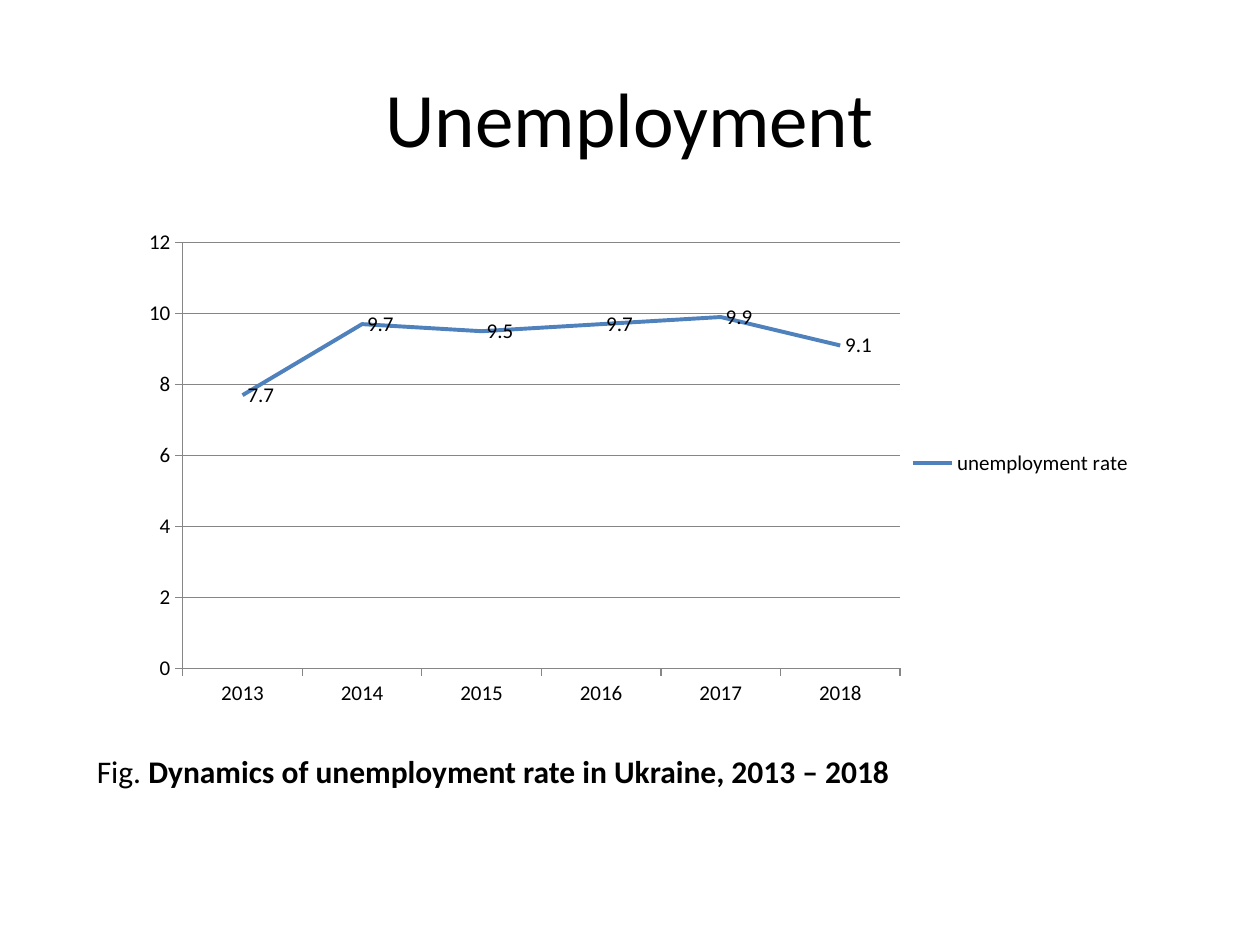
"""Build a slide with a line chart of the unemployment rate in Ukraine."""
import pptx
import pptx.chart.data
import pptx.dml.color
import pptx.enum.chart
import pptx.enum.text
import pptx.oxml
import pptx.oxml.ns
import pptx.util
from pptx.util import Inches

COLORS = {"text": "000000", "line": "4F81BD", "axis": "868686", "bg": "FFFFFF"}
RATES = {"2013": 7.7, "2014": 9.7, "2015": 9.5, "2016": 9.7, "2017": 9.9, "2018": 9.1}
PLOT = {"x": 0.058, "y": 0.057, "w": 0.702, "h": 0.856}


def rgb(name):
    return pptx.dml.color.RGBColor.from_string(COLORS[name])


def add_text(text, left, top, width, height, size=18, align="LEFT", anchor="TOP", bold_text=""):
    sp = s.shapes.add_textbox(Inches(left), Inches(top), Inches(width), Inches(height))
    tf = sp.text_frame
    tf.word_wrap = True
    tf.vertical_anchor = pptx.enum.text.MSO_ANCHOR[anchor]
    p = tf.paragraphs[0]
    p.alignment = pptx.enum.text.PP_ALIGN[align]
    for words, bold in ((text, False), (bold_text, True)):
        if words:
            r = p.add_run()
            r.text = words
            r.font.name = "Calibri"
            r.font.size = pptx.util.Pt(size)
            r.font.bold = bold
            r.font.color.rgb = rgb("text")


prs = pptx.Presentation()
prs.slide_width, prs.slide_height = Inches(10), Inches(7.5)
s = prs.slides.add_slide(prs.slide_layouts[6])
s.background.fill.solid()
s.background.fill.fore_color.rgb = rgb("bg")

add_text("Unemployment", 0.5, 0.3, 9, 1.25, size=44, align="CENTER", anchor="MIDDLE")

data = pptx.chart.data.CategoryChartData()
data.categories = list(RATES)
data.add_series("unemployment rate", list(RATES.values()))
chart = s.shapes.add_chart(
    pptx.enum.chart.XL_CHART_TYPE.LINE, Inches(0.98), Inches(1.7), Inches(8.11), Inches(3.95), data
).chart
chart.has_title = False
chart.font.name = "Calibri"
chart.font.size = pptx.util.Pt(12)
chart.font.color.rgb = rgb("text")
chart.has_legend = True
chart.legend.position = pptx.enum.chart.XL_LEGEND_POSITION.RIGHT
chart.legend.include_in_layout = False

for axis in (chart.category_axis, chart.value_axis):
    axis.major_tick_mark = pptx.enum.chart.XL_TICK_MARK.OUTSIDE
    axis.minor_tick_mark = pptx.enum.chart.XL_TICK_MARK.NONE
    axis.format.line.color.rgb = rgb("axis")
    axis.format.line.width = pptx.util.Pt(0.75)
chart.value_axis.minimum_scale = 0
chart.value_axis.maximum_scale = 12
chart.value_axis.major_unit = 2
chart.value_axis.has_major_gridlines = True
grid = chart.value_axis.major_gridlines.format.line
grid.color.rgb = rgb("axis")
grid.width = pptx.util.Pt(0.75)

plot = chart.plots[0]
plot.vary_by_categories = False
series = plot.series[0]
series.smooth = False
series.format.line.color.rgb = rgb("line")
series.format.line.width = pptx.util.Pt(2.25)
series.marker.style = pptx.enum.chart.XL_MARKER_STYLE.NONE
series.data_labels.show_value = True
series.data_labels.position = pptx.enum.chart.XL_LABEL_POSITION.RIGHT

modes = '<c:xMode val="edge"/><c:yMode val="edge"/>'
sizes = "".join(f'<c:{key} val="{value}"/>' for key, value in PLOT.items())
layout = pptx.oxml.parse_xml(
    f'<c:layout {pptx.oxml.ns.nsdecls("c")}><c:manualLayout><c:layoutTarget val="inner"/>'
    f"{modes}{sizes}</c:manualLayout></c:layout>"
)
area = chart.element.find(".//" + pptx.oxml.ns.qn("c:plotArea"))
for old in area.findall(pptx.oxml.ns.qn("c:layout")):
    area.remove(old)
area.insert(0, layout)

add_text("Fig. ", 0.67, 5.92, 8.23, 0.4,
         bold_text="Dynamics of unemployment rate in Ukraine, 2013 – 2018")

prs.save("out.pptx")
